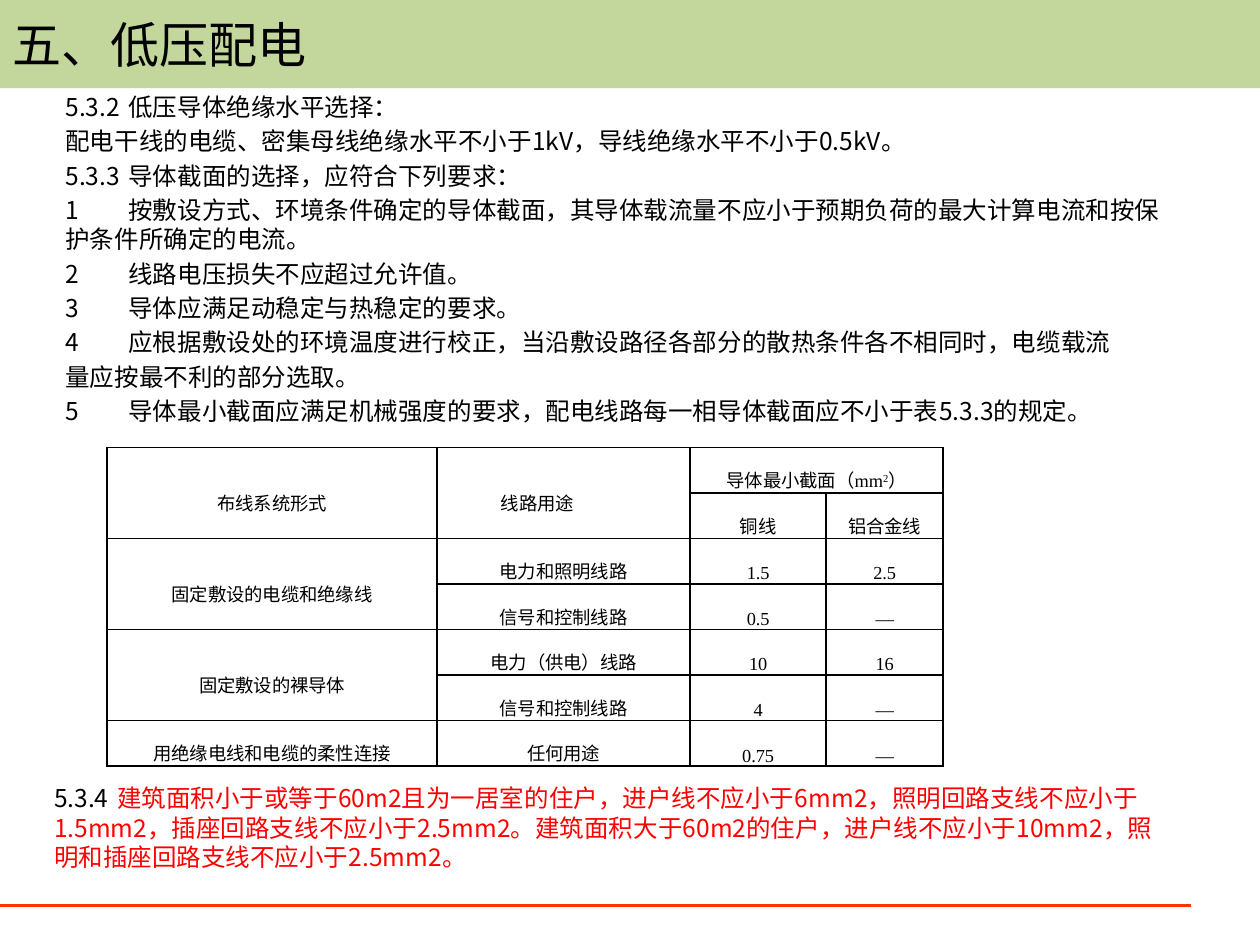
from dataclasses import dataclass

from lxml.etree import SubElement
from pptx import Presentation
from pptx.dml.color import RGBColor
from pptx.enum.shapes import MSO_CONNECTOR
from pptx.enum.text import MSO_ANCHOR, MSO_AUTO_SIZE, PP_ALIGN
from pptx.oxml.ns import qn
from pptx.util import Pt

COLOR = {"ink": "000000", "band": "C3D69B", "rule": "FF3300", "alert": "FF0000"}
SANS, SERIF = "Noto Sans CJK SC", "Times New Roman"
STOPS = (17, 40.5)

RULES = [
    "5.3.2\t低压导体绝缘水平选择：",
    "配电干线的电缆、密集母线绝缘水平不小于1kV，导线绝缘水平不小于0.5kV。",
    "5.3.3\t导体截面的选择，应符合下列要求：",
    "1\t按敷设方式、环境条件确定的导体截面，其导体载流量不应小于预期负荷的最大计算电流和按保护条件所确定的电流。",
    "2\t线路电压损失不应超过允许值。",
    "3\t导体应满足动稳定与热稳定的要求。",
    "4\t应根据敷设处的环境温度进行校正，当沿敷设路径各部分的散热条件各不相同时，电缆载流",
    "量应按最不利的部分选取。",
    "5\t导体最小截面应满足机械强度的要求，配电线路每一相导体截面应不小于表5.3.3的规定。",
]
HOMES = (
    "建筑面积小于或等于60m2且为一居室的住户，进户线不应小于6mm2，照明回路支线不应小于1.5mm2，"
    "插座回路支线不应小于2.5mm2。建筑面积大于60m2的住户，进户线不应小于10mm2，"
    "照明和插座回路支线不应小于2.5mm2。"
)


@dataclass
class Item:
    row: int
    col: int
    text: str
    down: int = 1
    wide: int = 1
    dent: float = 0


WIDTHS = (188.6, 144.6, 77.7, 66.9)
ROWS, ROW_H = 7, 26
ITEMS = [
    Item(0, 0, "布线系统形式", down=2),
    Item(0, 1, "线路用途", down=2, dent=31.5),
    Item(0, 2, "导体最小截面（mm^2^）", wide=2),
    Item(1, 2, "铜线"),
    Item(1, 3, "铝合金线"),
    Item(2, 0, "固定敷设的电缆和绝缘线", down=2),
    Item(2, 1, "电力和照明线路"),
    Item(2, 2, "1.5"),
    Item(2, 3, "2.5"),
    Item(3, 1, "信号和控制线路"),
    Item(3, 2, "0.5"),
    Item(3, 3, "—"),
    Item(4, 0, "固定敷设的裸导体", down=2),
    Item(4, 1, "电力（供电）线路"),
    Item(4, 2, "10"),
    Item(4, 3, "16"),
    Item(5, 1, "信号和控制线路"),
    Item(5, 2, "4"),
    Item(5, 3, "—"),
    Item(6, 0, "用绝缘电线和电缆的柔性连接"),
    Item(6, 1, "任何用途"),
    Item(6, 2, "0.75"),
    Item(6, 3, "—"),
]


def rgb(name: str) -> RGBColor:
    return RGBColor.from_string(COLOR[name])


def place(shape, left: float, top: float, width: float, height: float) -> None:
    shape.left, shape.top = Pt(left), Pt(top)
    shape.width, shape.height = Pt(width), Pt(height)


def style(para, face: str, size: float) -> None:
    para.font.name, para.font.size = face, Pt(size)
    para.font.color.rgb = rgb("ink")


def clause(para) -> None:
    """Format a numbered clause: no bullet, with tab stops after the number."""
    para.space_before = Pt(2.8)
    props = para._p.get_or_add_pPr()
    props.set("marL", "0")
    props.set("indent", "0")
    SubElement(props, qn("a:buNone"))
    tabs = SubElement(props, qn("a:tabLst"))
    for stop in STOPS:
        SubElement(tabs, qn("a:tab"), pos=str(Pt(stop)), algn="l")
    style(para, SANS, 14)


def border(cell) -> None:
    props = cell._tc.get_or_add_tcPr()
    for side in ("lnL", "lnR", "lnT", "lnB"):
        line = SubElement(props, qn(f"a:{side}"), w=str(Pt(1)))
        fill = SubElement(line, qn("a:solidFill"))
        SubElement(fill, qn("a:srgbClr"), val=COLOR["ink"])
    cell.fill.background()


def fill_cell(table, item: Item) -> None:
    cell = table.cell(item.row, item.col)
    if item.down > 1 or item.wide > 1:
        cell.merge(table.cell(item.row + item.down - 1, item.col + item.wide - 1))
    para = cell.text_frame.paragraphs[0]
    para.line_spacing = Pt(26)
    para.alignment = PP_ALIGN.JUSTIFY if item.dent else PP_ALIGN.CENTER
    if item.dent:
        para._p.get_or_add_pPr().set("indent", str(Pt(item.dent)))
    style(para, SERIF, 10.5)
    for turn, part in enumerate(item.text.split("^")):
        run = para.add_run()
        run.text = part
        if turn % 2:
            run._r.get_or_add_rPr().set("baseline", "30000")


def add_grid(slide) -> None:
    frame = slide.shapes.add_table(
        ROWS, len(WIDTHS), Pt(61.2), Pt(255.6), Pt(sum(WIDTHS)), Pt(ROWS * ROW_H)
    )
    table = frame.table
    table.first_row = table.horz_banding = False
    for col, width in zip(table.columns, WIDTHS):
        col.width = Pt(width)
    for row in table.rows:
        row.height = Pt(ROW_H)
        for cell in row.cells:
            cell.vertical_anchor = MSO_ANCHOR.MIDDLE
            cell.margin_left = cell.margin_right = Pt(5)
            cell.margin_top = cell.margin_bottom = Pt(0)
            border(cell)
    for item in ITEMS:
        fill_cell(table, item)


def add_rule(slide) -> None:
    """Draw the foot line behind everything else."""
    line = slide.shapes.add_connector(
        MSO_CONNECTOR.STRAIGHT, Pt(0), Pt(517.7), Pt(680.4), Pt(517.7)
    )
    line.line.color.rgb, line.line.width = rgb("rule"), Pt(1.75)
    SubElement(line._element.spPr, qn("a:effectLst"))
    slide.shapes._spTree.insert(2, line._element)


def add_title(slide) -> None:
    title = slide.shapes.title
    place(title, 0, 0, 720, 50.4)
    title.fill.solid()
    title.fill.fore_color.rgb = rgb("band")
    frame = title.text_frame
    frame.text = "五、低压配电"
    frame.auto_size, frame.vertical_anchor = MSO_AUTO_SIZE.NONE, MSO_ANCHOR.MIDDLE
    para = frame.paragraphs[0]
    para.alignment = PP_ALIGN.LEFT
    style(para, "Calibri", 28)


def add_body(slide) -> None:
    body = slide.placeholders[1]
    place(body, 30.2, 49, 648, 284.4)
    frame = body.text_frame
    frame.auto_size = MSO_AUTO_SIZE.NONE
    frame.text = "\n".join(RULES)
    for para in frame.paragraphs:
        clause(para)


def add_homes(slide) -> None:
    box = slide.shapes.add_textbox(Pt(23.8), Pt(444.2), Pt(648), Pt(53.3))
    box.text_frame.word_wrap = True
    para = box.text_frame.paragraphs[0]
    clause(para)
    para.add_run().text = "5.3.4\t"
    run = para.add_run()
    run.text = HOMES
    run.font.color.rgb = rgb("alert")


def main() -> None:
    deck = Presentation()
    deck.slide_width, deck.slide_height = Pt(720), Pt(540)
    slide = deck.slides.add_slide(deck.slide_layouts[1])
    add_title(slide)
    add_body(slide)
    add_homes(slide)
    add_grid(slide)
    add_rule(slide)
    deck.save("out.pptx")


if __name__ == "__main__":
    main()
